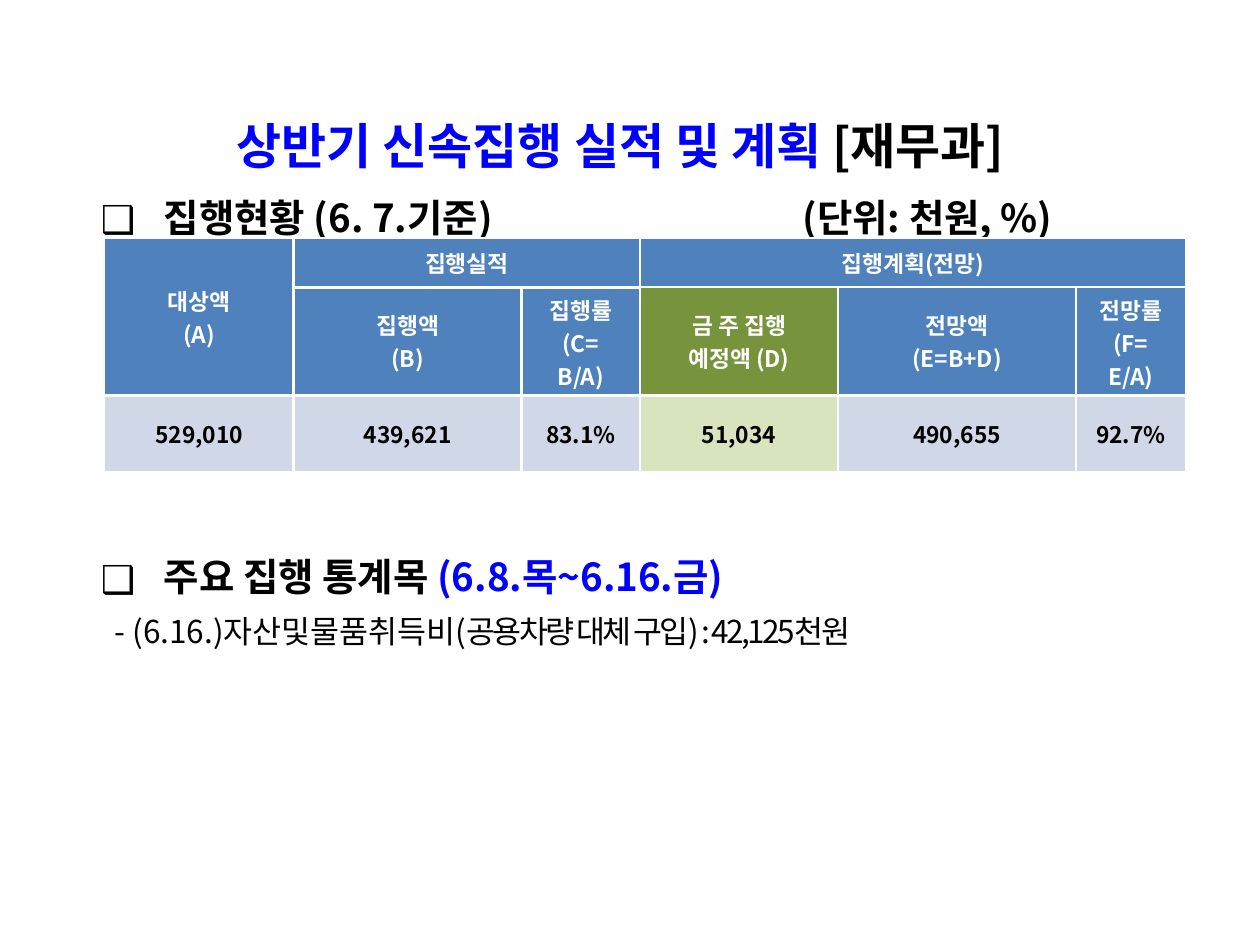
import lxml.etree
import pptx
import pptx.dml.color
import pptx.enum.text
import pptx.oxml.ns
import pptx.util

Inches = pptx.util.Inches
Pt = pptx.util.Pt
ALIGN = pptx.enum.text.PP_ALIGN
MIDDLE = pptx.enum.text.MSO_ANCHOR.MIDDLE
FONT = "Noto Sans CJK KR"
COLORS = {
    "black": "000000", "blue": "0000FF", "white": "FFFFFF", "header": "4F81BD",
    "plan_header": "77933C", "value": "D0D8E8", "plan_value": "D7E4BD",
}
COLUMN_WIDTHS = [1.5, 1.81, 0.94, 1.57, 1.89, 0.87]
ROW_HEIGHTS = [0.39, 0.86, 0.61]
PLAN_COLUMN = 3
MERGES = [((0, 0), (1, 0)), ((0, 1), (0, 2)), ((0, 3), (0, 5))]
ROWS = [
    ["대상액\n(A)", "집행실적", "", "집행계획(전망)", "", ""],
    ["", "집행액\n(B)", "집행률\n(C=\nB/A)", "금 주 집행\n예정액 (D)",
     "전망액\n(E=B+D)", "전망률\n(F=\nE/A)"],
    ["529,010", "439,621", "83.1%", "51,034", "490,655", "92.7%"],
]


def rgb(name):
    """Return the named colour."""
    return pptx.dml.color.RGBColor.from_string(COLORS[name])


def set_values(target, values):
    """Set each attribute of the target from a dict."""
    for name, value in values.items():
        setattr(target, name, value)


def add_child(parent, tag, **attributes):
    """Append a drawing element to its parent."""
    return lxml.etree.SubElement(parent, pptx.oxml.ns.qn(tag), attributes)


def add_run(paragraph, text, size, color="black", bold=True, spacing=0):
    """Add a formatted run to a paragraph."""
    run = paragraph.add_run()
    run.text = text
    set_values(run.font, {"size": Pt(size), "bold": bold, "name": FONT})
    run.font.color.rgb = rgb(color)
    properties = run.font._element
    add_child(properties, "a:ea", typeface=FONT)
    if spacing:
        properties.set("spc", str(int(spacing * 100)))


def add_line(slide, box, runs, align=ALIGN.LEFT, bullet=False):
    """Add one line of text, centred vertically in its box."""
    frame = slide.shapes.add_textbox(*map(Inches, box)).text_frame
    set_values(frame, {
        "word_wrap": True, "vertical_anchor": MIDDLE, "margin_left": 0,
        "margin_right": 0, "margin_top": 0, "margin_bottom": 0,
    })
    paragraph = frame.paragraphs[0]
    paragraph.alignment = align
    if bullet:
        properties = paragraph._p.get_or_add_pPr()
        properties.set("marL", str(Inches(0.5)))
        properties.set("indent", str(Inches(-0.5)))
        bullet_color = add_child(properties, "a:buClr")
        add_child(bullet_color, "a:srgbClr", val=COLORS["black"])
        add_child(properties, "a:buFont", typeface=FONT)
        add_child(properties, "a:buChar", char="❑")
    for run in runs:
        add_run(paragraph, **run)


def add_title(slide, box):
    """Add the slide title with the department name."""
    add_line(slide, box, [
        {"text": "상반기 신속집행 실적 및 계획 ", "size": 28, "color": "blue"},
        {"text": "[재무과]", "size": 28},
    ], ALIGN.CENTER)


def add_status_heading(slide, box):
    """Add the status heading and the unit note at its right."""
    left, top, width, height = box
    unit_offset = 5.57
    add_line(slide, (left, top, unit_offset, height),
             [{"text": "집행현황 (6. 7.기준)", "size": 22}], bullet=True)
    add_line(slide, (left + unit_offset, top, width - unit_offset, height),
             [{"text": "(단위: 천원, %)", "size": 22}])


def add_major_items(slide, box):
    """Add the major items heading and its detail line."""
    left, top, width, height = box
    line_height = height / 2
    detail_indent = 0.11
    add_line(slide, (left, top, width, line_height), [
        {"text": "주요 집행 통계목 ", "size": 22},
        {"text": "(6.8.목~6.16.금)", "size": 22, "color": "blue"},
    ], bullet=True)
    add_line(slide, (left + detail_indent, top + line_height,
                     width - detail_indent, line_height), [
        {"text": "- (6.16.)자산및물품취득비", "size": 18, "bold": False},
        {"text": "(공용차량 대체 구입) : 42,125천원", "size": 18,
         "bold": False, "spacing": -1.5},
    ])


def horizontal_border(edge, column):
    """Return the width of the border above row number edge."""
    if edge == 1:
        return 1.5 if column >= PLAN_COLUMN else 2.25
    return {0: 1, 2: 2.25, 3: 1.5}[edge]


def vertical_border(edge):
    """Return the width of the border before column number edge."""
    return 1 if edge in (0, len(COLUMN_WIDTHS)) else 1.5


def format_cell(cell, text, row, column):
    """Fill a cell with its text, colour and borders."""
    is_value = row == len(ROWS) - 1
    is_plan = column == PLAN_COLUMN and row > 0
    fill_name = ("plan_" if is_plan else "") + ("value" if is_value else "header")
    cell.vertical_anchor = MIDDLE
    cell.fill.solid()
    cell.fill.fore_color.rgb = rgb(fill_name)
    for index, line in enumerate(text.split("\n")):
        frame = cell.text_frame
        paragraph = frame.add_paragraph() if index else frame.paragraphs[0]
        paragraph.alignment = ALIGN.CENTER
        add_run(paragraph, line, 13, "black" if is_value else "white")
    widths = {
        "a:lnL": vertical_border(column),
        "a:lnR": vertical_border(column + cell.span_width),
        "a:lnT": horizontal_border(row, column),
        "a:lnB": horizontal_border(row + cell.span_height, column),
    }
    properties = cell._tc.get_or_add_tcPr()
    for index, (tag, width) in enumerate(widths.items()):
        line = add_child(properties, tag, w=str(Pt(width)))
        add_child(add_child(line, "a:solidFill"), "a:srgbClr", val=COLORS["white"])
        properties.insert(index, line)


def add_status_table(slide, box):
    """Add the table of spending results and plans."""
    table = slide.shapes.add_table(
        len(ROWS), len(COLUMN_WIDTHS), *map(Inches, box)).table
    set_values(table, {"first_row": False, "horz_banding": False})
    for column, width in zip(table.columns, COLUMN_WIDTHS):
        column.width = Inches(width)
    for row, height in zip(table.rows, ROW_HEIGHTS):
        row.height = Inches(height)
    for first, last in MERGES:
        table.cell(*first).merge(table.cell(*last))
    for row, texts in enumerate(ROWS):
        for column, text in enumerate(texts):
            cell = table.cell(row, column)
            if not cell.is_spanned:
                if not cell.is_merge_origin:
                    spans = (1, 1)
                    assert (cell.span_height, cell.span_width) == spans
                format_cell(cell, text, row, column)


def main():
    """Build and save the presentation."""
    presentation = pptx.Presentation()
    set_values(presentation, {"slide_width": Inches(10), "slide_height": Inches(7.5)})
    slide = presentation.slides.add_slide(presentation.slide_layouts[6])
    add_title(slide, (0.2, 0.85, 9.45, 0.6))
    add_status_heading(slide, (0.8, 1.48, 8.6, 0.48))
    add_major_items(slide, (0.8, 4.36, 8.6, 0.86))
    add_status_table(slide, (0.83, 1.89, sum(COLUMN_WIDTHS), sum(ROW_HEIGHTS)))
    presentation.save("out.pptx")


if __name__ == "__main__":
    main()
